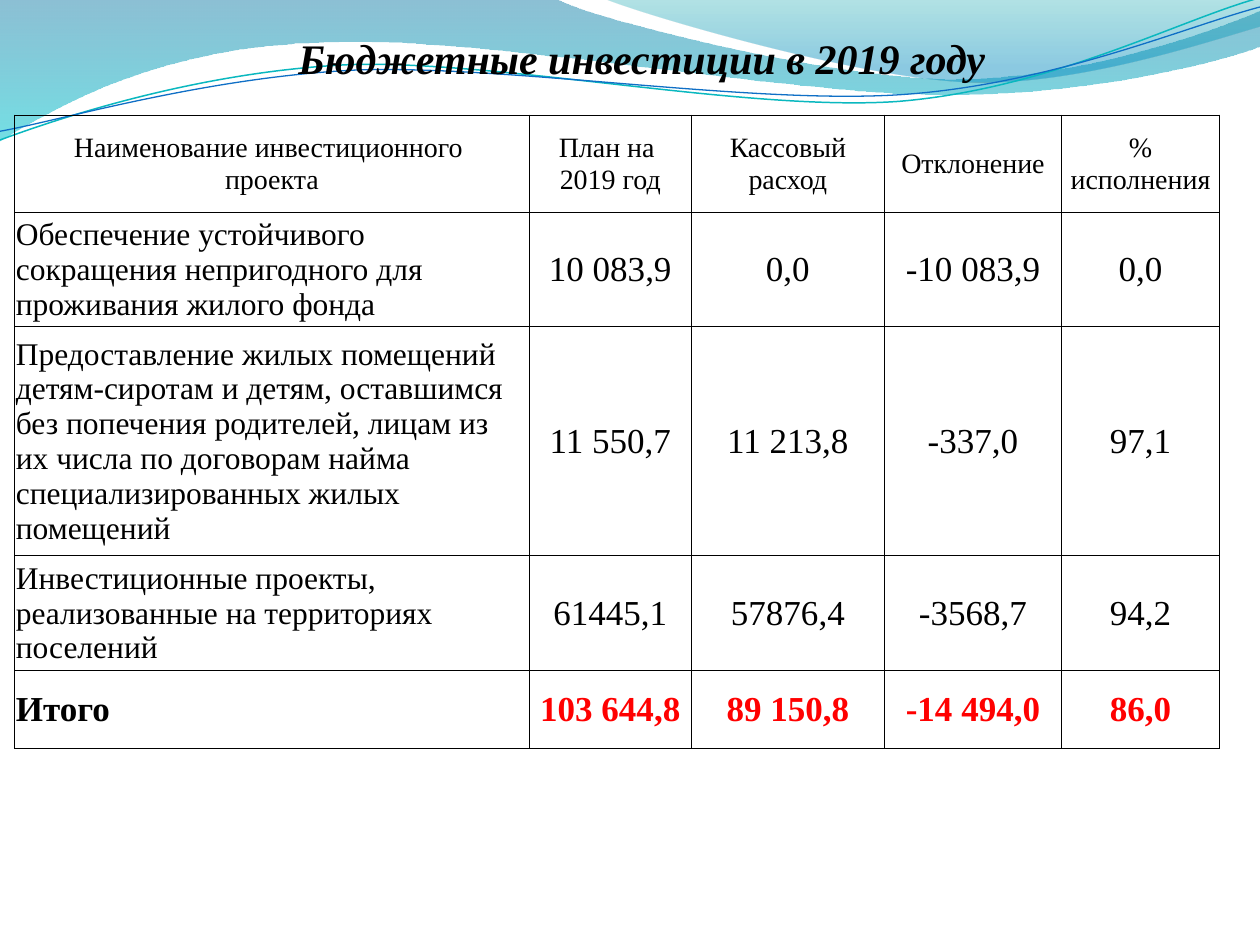
from lxml import etree
from pptx import Presentation
from pptx.dml.color import RGBColor
from pptx.enum.text import MSO_ANCHOR, PP_ALIGN
from pptx.oxml import parse_xml
from pptx.oxml.ns import nsdecls, qn
from pptx.util import Pt

CENTER, LEFT, JUSTIFY = PP_ALIGN.CENTER, PP_ALIGN.LEFT, PP_ALIGN.JUSTIFY
MIDDLE = MSO_ANCHOR.MIDDLE
FONT = "Times New Roman"
BLACK, RED = "000000", "FF0000"


def color(hex_string):
    return RGBColor.from_string(hex_string)


def add_run(paragraph, text, size, hex_string=BLACK, bold=False, italic=False):
    run = paragraph.add_run()
    run.text = text
    run.font.name = FONT
    run.font.size = Pt(size)
    run.font.bold = bold
    run.font.italic = italic
    run.font.color.rgb = color(hex_string)


presentation = Presentation()
presentation.slide_width = Pt(720)
presentation.slide_height = Pt(540)
slide = presentation.slides.add_slide(presentation.slide_layouts[6])

# Waves: a start point, then line ends (2 numbers) or Bezier curves (6 numbers).
# Gradient stops are position, colour, opacity in percent.
waves = [
    {"start": (0, 0),
     "parts": [(317, -1), (343, 12, 478, 45, 546, 45), (614, 45, 690, 19, 720, 6),
               (721, 26), (708, 32, 626, 55, 537, 54), (448, 54, 275, 20, 185, 24),
               (93, 26, 33, 60, -1, 81)],
     "stops": [(0, "0074A1", 45), (1, "00C6CF", 55)]},
    {"start": (345, -1),
     "parts": [(366, 8, 491, 45, 554, 47), (616, 49, 692, 23, 720, 15), (720, 0)],
     "stops": [(0, "00A1A9", 30), (0.8, "008BBF", 45)]},
    {"start": (0, 80),
     "parts": [(35, 67, 114, 41, 199, 37), (284, 34, 427, 64, 513, 58),
               (600, 51, 675, 11, 719, -1)],
     "line": ("0AB8BF", 0.85)},
    {"start": (0, 75),
     "parts": [(34, 69, 118, 44, 204, 40), (290, 37, 430, 60, 516, 54),
               (602, 48, 678, 15, 720, 4)],
     "line": ("0F6FC6", 0.75)},
]
for wave in waves:
    start_x, start_y = wave["start"]
    builder = slide.shapes.build_freeform(Pt(start_x), Pt(start_y))
    builder.add_line_segments([(Pt(part[-2]), Pt(part[-1])) for part in wave["parts"]],
                              close="stops" in wave)
    shape = builder.convert_to_shape()
    shape.shadow.inherit = False

    # Turn the segments that have control points into Bezier curves
    segments = list(shape.element.spPr.iter(qn("a:lnTo")))
    for segment, part in zip(segments, wave["parts"]):
        if len(part) == 6:
            curve = etree.Element(qn("a:cubicBezTo"))
            for x, y in zip(part[::2], part[1::2]):
                point = etree.SubElement(curve, qn("a:pt"))
                point.set("x", str(Pt(x) - shape.left))
                point.set("y", str(Pt(y) - shape.top))
            segment.getparent().replace(segment, curve)

    if "line" in wave:
        line_color, line_width = wave["line"]
        shape.fill.background()
        shape.line.color.rgb = color(line_color)
        shape.line.width = Pt(line_width)
    else:
        shape.line.fill.background()
        shape.fill.gradient()
        shape.fill.gradient_angle = 270
        for stop, (position, stop_color, _) in zip(shape.fill.gradient_stops, wave["stops"]):
            stop.position = position
            stop.color.rgb = color(stop_color)
        stop_colors = list(shape.element.spPr.iter(qn("a:srgbClr")))
        for element, (_, _, opacity) in zip(stop_colors, wave["stops"]):
            etree.SubElement(element, qn("a:alpha")).set("val", str(opacity * 1000))

# Title
title = slide.shapes.add_textbox(Pt(36.7), Pt(15), Pt(660), Pt(51))
title.text_frame.word_wrap = True
paragraph = title.text_frame.paragraphs[0]
paragraph.alignment = CENTER
add_run(paragraph, " Бюджетные инвестиции в 2019 году ", 24, bold=True, italic=True)

# Investment table; each cell text is split into paragraphs at line ends
rows = [
    ["Наименование инвестиционного \nпроекта", "План на \n2019 год", "Кассовый расход",
     "Отклонение", "% исполнения"],
    ["Обеспечение устойчивого сокращения непригодного для проживания жилого фонда",
     "10 083,9", "0,0", "-10 083,9", "0,0"],
    ["Предоставление жилых помещений детям-сиротам и детям, оставшимся без попечения "
     "родителей, лицам из их числа по договорам найма специализированных жилых помещений",
     "11 550,7", "11 213,8", "-337,0", "97,1"],
    ["Инвестиционные проекты, реализованные на территориях поселений",
     "61445,1", "57876,4", "-3568,7", "94,2"],
    ["Итого", "103 644,8", "89 150,8", "-14 494,0", "86,0"],
]
column_widths = [294, 92.7, 110.3, 101.3, 90.2]
row_heights = [55.4, 65.1, 130.8, 65.1, 44.6]
table = slide.shapes.add_table(len(rows), len(column_widths), Pt(8.4), Pt(65.7),
                               Pt(sum(column_widths)), Pt(sum(row_heights))).table
table.first_row = False
table.horz_banding = False
for column, width in zip(table.columns, column_widths):
    column.width = Pt(width)
for row, height in zip(table.rows, row_heights):
    row.height = Pt(height)

last_row = len(rows) - 1
for row_index, texts in enumerate(rows):
    for column_index, text in enumerate(texts):
        cell = table.cell(row_index, column_index)
        cell.vertical_anchor = MIDDLE
        cell.margin_left = cell.margin_right = cell.margin_top = Pt(0.7)
        cell.margin_bottom = Pt(0)
        is_total = row_index == last_row
        is_name = column_index == 0 and row_index > 0
        size = 16 if row_index == 0 else 18 if is_name and not is_total else 20
        alignment = CENTER
        if is_name:
            alignment = JUSTIFY if is_total else LEFT
        text_color = RED if is_total and not is_name else BLACK
        for index, line in enumerate(text.split("\n")):
            frame = cell.text_frame
            paragraph = frame.add_paragraph() if index else frame.paragraphs[0]
            paragraph.alignment = alignment
            add_run(paragraph, line, size, text_color, bold=is_total)
        properties = cell._tc.get_or_add_tcPr()
        for side in ("lnL", "lnR", "lnT", "lnB"):
            properties.append(parse_xml(
                f'<a:{side} {nsdecls("a")} w="{Pt(0.5)}"><a:solidFill>'
                f'<a:srgbClr val="{BLACK}"/></a:solidFill></a:{side}>'))
        cell.fill.background()

presentation.save("out.pptx")
